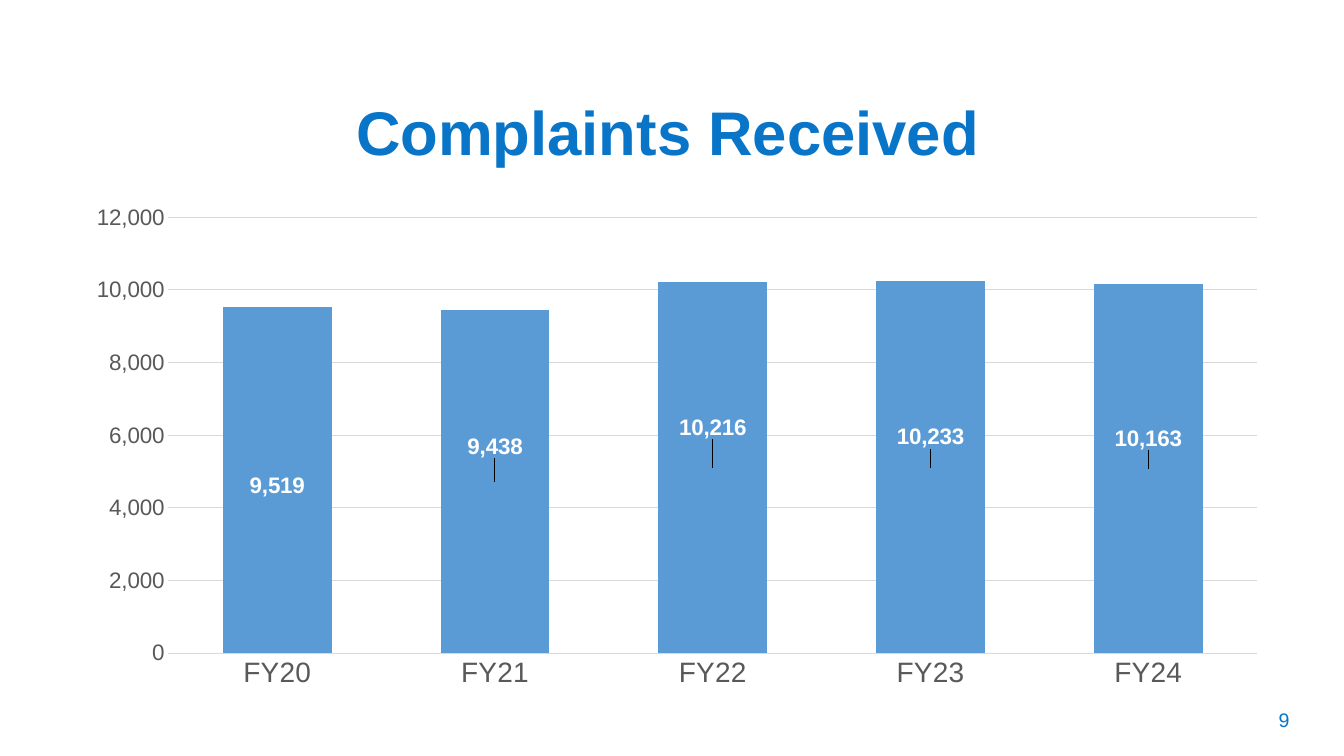
import pptx
import pptx.chart.data
import pptx.dml.color
import pptx.enum.chart
import pptx.enum.text
import pptx.oxml
import pptx.oxml.ns
import pptx.util
from pptx.util import Inches

FONT = "Arial"
NUMBER_FORMAT = "#,##0"
COLORS = {
    "accent": "0875C8",
    "bar": "5B9BD5",
    "axis_text": "595959",
    "grid": "D9D9D9",
    "label": "FFFFFF",
}
COMPLAINTS = {"FY20": 9519, "FY21": 9438, "FY22": 10216, "FY23": 10233, "FY24": 10163}
LABEL_SHIFTS = [0.01, -0.07, -0.08, -0.06, -0.06]
PLOT_LAYOUT = {"x": 0.08, "y": 0.045, "w": 0.9, "h": 0.865}


def color(name):
    return pptx.dml.color.RGBColor.from_string(COLORS[name])


def style_font(font, size, color_name, bold=False):
    font.name = FONT
    font.size = pptx.util.Pt(size)
    font.bold = bold
    font.color.rgb = color(color_name)


def style_line(line):
    line.color.rgb = color("grid")
    line.width = pptx.util.Pt(0.75)


def add_text(slide, text, box, size, anchor, bold=False):
    shape = slide.shapes.add_textbox(*map(Inches, box))
    frame = shape.text_frame
    frame.word_wrap = True
    frame.vertical_anchor = anchor
    paragraph = frame.paragraphs[0]
    paragraph.text = text
    paragraph.alignment = pptx.enum.text.PP_ALIGN.CENTER
    paragraph.line_spacing = 0.9
    style_font(paragraph.font, size, "accent", bold)


def manual_layout(settings):
    values = "".join(f'<c:{tag} val="{value}"/>' for tag, value in settings.items())
    return pptx.oxml.parse_xml(
        f'<c:layout {pptx.oxml.ns.nsdecls("c")}>'
        f"<c:manualLayout>{values}</c:manualLayout></c:layout>"
    )


def set_plot_layout(chart):
    plot_area = chart.plots[0]._element.getparent()
    for layout in plot_area.findall(pptx.oxml.ns.qn("c:layout")):
        plot_area.remove(layout)
    modes = {"layoutTarget": "inner", "xMode": "edge", "yMode": "edge"}
    plot_area.insert(0, manual_layout({**modes, **PLOT_LAYOUT}))


def style_axes(chart):
    for axis, size in ((chart.category_axis, 20), (chart.value_axis, 16)):
        axis.major_tick_mark = pptx.enum.chart.XL_TICK_MARK.NONE
        axis.minor_tick_mark = pptx.enum.chart.XL_TICK_MARK.NONE
        style_font(axis.tick_labels.font, size, "axis_text")
    style_line(chart.category_axis.format.line)
    value_axis = chart.value_axis
    value_axis.minimum_scale = 0
    value_axis.maximum_scale = 12000
    value_axis.major_unit = 2000
    value_axis.format.line.fill.background()
    value_axis.tick_labels.number_format = NUMBER_FORMAT
    value_axis.tick_labels.number_format_is_linked = False
    style_line(value_axis.major_gridlines.format.line)


def style_labels(series):
    labels = series.data_labels
    labels.show_value = True
    labels.number_format = NUMBER_FORMAT
    labels.number_format_is_linked = False
    labels.position = pptx.enum.chart.XL_LABEL_POSITION.CENTER
    style_font(labels.font, 16, "label", True)
    for index, shift in enumerate(LABEL_SHIFTS):
        label = series.points[index].data_label
        style_font(label.font, 16, "label", True)
        label.position = pptx.enum.chart.XL_LABEL_POSITION.CENTER
    label_elements = labels._element.findall(pptx.oxml.ns.qn("c:dLbl"))
    for element, shift in zip(label_elements, LABEL_SHIFTS):
        element.insert(1, manual_layout({"x": 0, "y": shift}))


def add_complaints_chart(slide):
    data = pptx.chart.data.CategoryChartData(number_format=NUMBER_FORMAT)
    data.categories = list(COMPLAINTS)
    data.add_series("Series 1", list(COMPLAINTS.values()))
    chart = slide.shapes.add_chart(
        pptx.enum.chart.XL_CHART_TYPE.COLUMN_CLUSTERED,
        Inches(0.71), Inches(1.93), Inches(12), Inches(5), data,
    ).chart
    chart.has_title = False
    chart.has_legend = False
    style_font(chart.font, 10, "axis_text")
    plot = chart.plots[0]
    plot.gap_width = 100
    plot.overlap = -27
    plot.vary_by_categories = False
    series = plot.series[0]
    series.format.fill.solid()
    series.format.fill.fore_color.rgb = color("bar")
    style_axes(chart)
    style_labels(series)
    set_plot_layout(chart)


def main():
    presentation = pptx.Presentation()
    presentation.slide_width = Inches(13.33)
    presentation.slide_height = Inches(7.5)
    slide = presentation.slides.add_slide(presentation.slide_layouts[6])
    anchors = pptx.enum.text.MSO_ANCHOR
    add_text(slide, "9", (12.29, 6.95, 0.89, 0.4), 14, anchors.MIDDLE)
    add_text(slide, "Complaints Received", (1.47, 0.97, 10.31, 1.45), 44, anchors.TOP, True)
    add_complaints_chart(slide)
    presentation.save("out.pptx")


if __name__ == "__main__":
    main()
